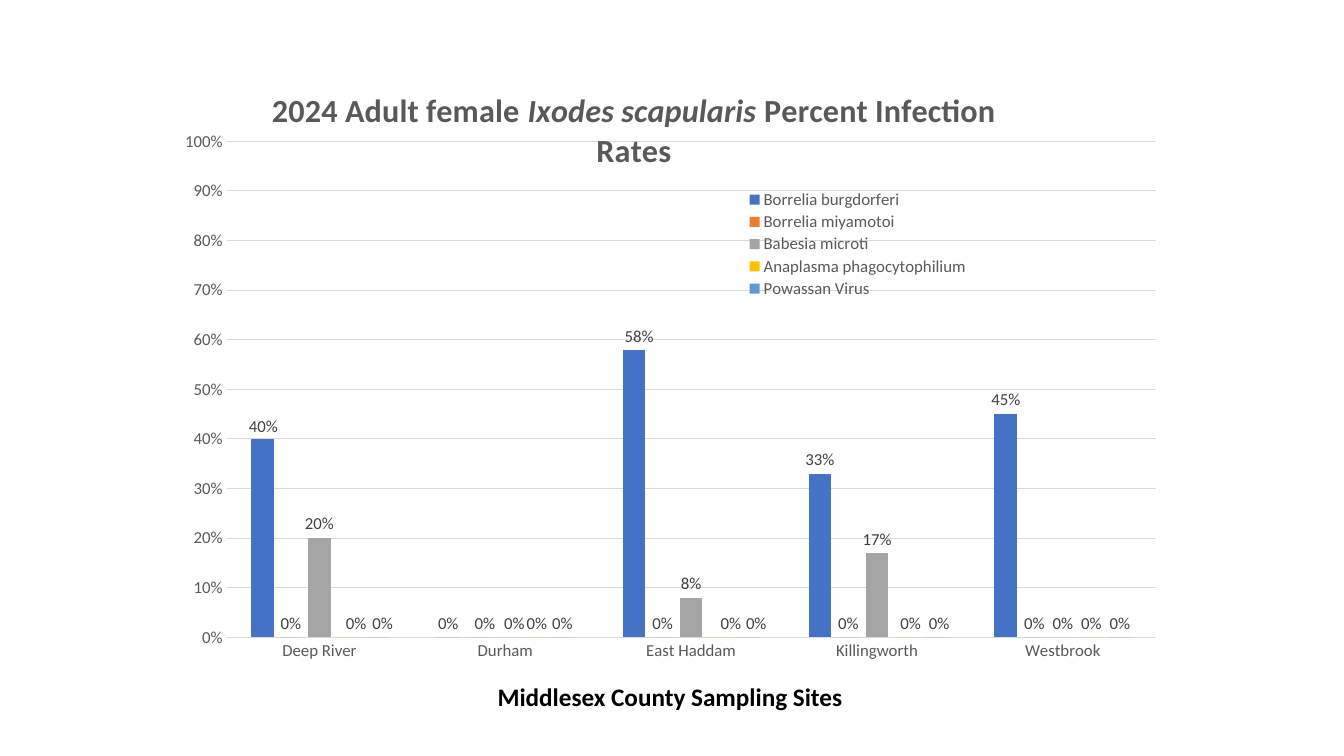
from dataclasses import dataclass

from lxml.etree import SubElement
from pptx import Presentation
from pptx.chart.data import CategoryChartData
from pptx.dml.color import RGBColor
from pptx.enum.chart import XL_CHART_TYPE, XL_LABEL_POSITION, XL_LEGEND_POSITION, XL_TICK_MARK
from pptx.enum.text import MSO_AUTO_SIZE, PP_ALIGN
from pptx.oxml.ns import qn
from pptx.util import Cm, Pt


@dataclass(frozen=True)
class Theme:
    """Font, colours and type sizes of the slide."""

    font: str = "Calibri"
    black: str = "000000"
    muted: str = "595959"
    label: str = "404040"
    rule: str = "D9D9D9"
    base_size: int = 10
    chart_size: int = 12
    caption_size: int = 18
    title_size: int = 23


THEME = Theme()
SITES = ["Deep River", "Durham", "East Haddam", "Killingworth", "Westbrook"]
PATHOGENS = [
    ("Borrelia burgdorferi", "4472C4", [0.4, 0, 0.58, 0.33, 0.45]),
    ("Borrelia miyamotoi", "ED7D31", [0] * 5),
    ("Babesia microti", "A5A5A5", [0.2, 0, 0.08, 0.17, 0]),
    ("Anaplasma phagocytophilium", "FFC000", [0] * 5),
    ("Powassan Virus", "5B9BD5", [0] * 5),
]
LABEL_SHIFTS = [
    {0: (0.001, 0.003), 2: (0.005, 0.002)},
    {1: (0.008, 0)},
    {1: (0.009, 0), 3: (0, 0.002)},
    {0: (0.008, 0), 1: (0.003, 0), 2: (0.011, 0), 3: (0.005, 0)},
    {0: (0.006, 0), 2: (0.008, 0), 3: (0.005, 0)},
]


def style_font(font, size, colour, bold=False, italic=False):
    """Set the face, size, colour and emphasis of a font."""
    font.name = THEME.font
    font.size = Pt(size)
    font.color.rgb = RGBColor.from_string(colour)
    font.bold = bold
    font.italic = italic


def rule_line(line):
    """Draw a thin light line."""
    line.color.rgb = RGBColor.from_string(THEME.rule)
    line.width = Pt(0.75)


def place(part, index, x, y, size=None, inner=False):
    """Give a chart part a manual layout in fractions of the chart."""
    for previous in part.findall(qn("c:layout")):
        part.remove(previous)
    layout = SubElement(part, qn("c:layout"))
    part.insert(index, layout)
    manual = SubElement(layout, qn("c:manualLayout"))
    settings = [("layoutTarget", "inner")] if inner else []
    if index == 0 or part.tag != qn("c:dLbl"):
        settings += [("xMode", "edge"), ("yMode", "edge")]
    settings += [("x", x), ("y", y)]
    if size:
        settings += zip("wh", size)
    for tag, value in settings:
        SubElement(manual, qn(f"c:{tag}")).set("val", str(value))


def add_title(chart):
    """Write the title over the top of the plot."""
    chart.has_title = True
    frame = chart.chart_title.text_frame
    lines = [
        [("2024 Adult female ", False), ("Ixodes scapularis", True), (" Percent Infection", False)],
        [("Rates", False)],
    ]
    for number, line in enumerate(lines):
        paragraph = frame.add_paragraph() if number else frame.paragraphs[0]
        paragraph.alignment = PP_ALIGN.CENTER
        for text, italic in line:
            run = paragraph.add_run()
            run.text = text
            style_font(run.font, THEME.title_size, THEME.muted, True, italic)
    title = chart.chart_title._element
    place(title, 1, 0.1, 0.01)
    title.find(qn("c:overlay")).set("val", "1")


def style_axes(chart):
    """Format the site axis and the percent axis."""
    for axis in (chart.category_axis, chart.value_axis):
        axis.major_tick_mark = axis.minor_tick_mark = XL_TICK_MARK.NONE
        style_font(axis.tick_labels.font, THEME.chart_size, THEME.muted)
    rule_line(chart.category_axis.format.line)
    percent = chart.value_axis
    percent.minimum_scale, percent.maximum_scale, percent.major_unit = 0, 1, 0.1
    percent.format.line.fill.background()
    percent.has_major_gridlines = True
    rule_line(percent.major_gridlines.format.line)
    percent.tick_labels.number_format = "0%"
    percent.tick_labels.number_format_is_linked = False


def add_legend(chart):
    """Set the pathogen legend inside the plot."""
    chart.has_legend = True
    chart.legend.position = XL_LEGEND_POSITION.RIGHT
    chart.legend.include_in_layout = True
    style_font(chart.legend.font, THEME.chart_size, THEME.muted)
    place(chart.legend._element, 1, 0.57, 0.18, (0.23, 0.19))


def style_series(series, colour, shifts):
    """Colour one pathogen's columns and label them, nudging crowded labels."""
    series.format.fill.solid()
    series.format.fill.fore_color.rgb = RGBColor.from_string(colour)
    series.invert_if_negative = False
    labels = series.data_labels
    labels.show_value = True
    labels.number_format = "0%"
    labels.number_format_is_linked = False
    labels.position = XL_LABEL_POSITION.OUTSIDE_END
    style_font(labels.font, THEME.chart_size, THEME.label)
    for site in shifts:
        label = series.points[site].data_label
        label.position = XL_LABEL_POSITION.OUTSIDE_END
        style_font(label.font, THEME.chart_size, THEME.label)
    for label in labels._element.findall(qn("c:dLbl")):
        site = int(label.find(qn("c:idx")).get("val"))
        place(label, 1, *shifts[site])


def add_infection_chart(slide):
    """Add the clustered columns of infection rates by site."""
    data = CategoryChartData(number_format="0%")
    data.categories = SITES
    for name, _, rates in PATHOGENS:
        data.add_series(name, rates)
    chart = slide.shapes.add_chart(
        XL_CHART_TYPE.COLUMN_CLUSTERED, Cm(4.24), Cm(2.01), Cm(25.37), Cm(15.06), data
    ).chart
    style_font(chart.font, THEME.base_size, THEME.black)
    add_title(chart)
    style_axes(chart)
    add_legend(chart)
    plot = chart.plots[0]
    plot.gap_width, plot.overlap, plot.vary_by_categories = 219, -27, False
    for series, (_, colour, _), shifts in zip(plot.series, PATHOGENS, LABEL_SHIFTS):
        style_series(series, colour, shifts)
    plot_area = chart._chartSpace.chart.plotArea
    place(plot_area, 0, 0.058, 0.103, (0.923, 0.83), inner=True)


def add_caption(slide):
    """Name the sampling area below the chart."""
    frame = slide.shapes.add_textbox(Cm(12.29), Cm(17.04), Cm(9.27), Cm(1.02)).text_frame
    frame.word_wrap = False
    frame.auto_size = MSO_AUTO_SIZE.SHAPE_TO_FIT_TEXT
    run = frame.paragraphs[0].add_run()
    run.text = "Middlesex County Sampling Sites"
    style_font(run.font, THEME.caption_size, THEME.black, bold=True)


def main():
    """Build and save the slide."""
    deck = Presentation()
    deck.slide_width, deck.slide_height = Cm(33.87), Cm(19.05)
    slide = deck.slides.add_slide(deck.slide_layouts[6])
    add_infection_chart(slide)
    add_caption(slide)
    deck.save("out.pptx")


if __name__ == "__main__":
    main()
